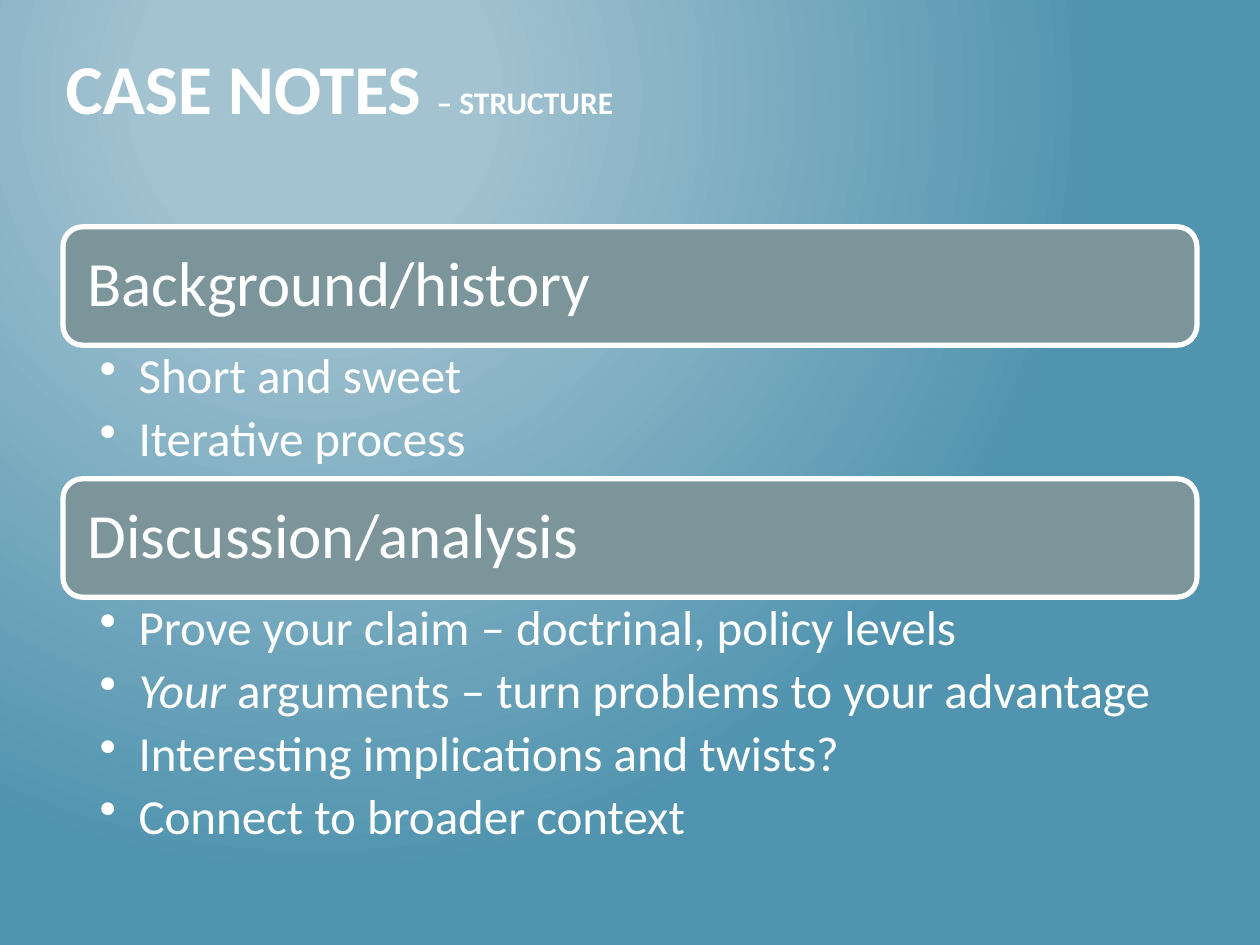
import pptx
import pptx.util
import pptx.dml.color
import pptx.enum.shapes
import pptx.enum.text
import pptx.oxml
import pptx.oxml.ns
from lxml import etree

Inches, Pt = pptx.util.Inches, pptx.util.Pt
qn = pptx.oxml.ns.qn
HEX = {"glow": "A3C3D1", "sea": "5194AF", "bar": "7C959A", "text": "FFFFFF"}
RGB = {name: pptx.dml.color.RGBColor.from_string(code) for name, code in HEX.items()}
LEFT, WIDTH, BAR = 0.5, 9, 0.94

# Each part: top of its bar, height of its list, heading, points of (words, italic) runs
PARTS = [
    (1.8, 1.06, "Background/history", [
        [("Short and sweet", False)],
        [("Iterative process", False)],
    ]),
    (3.8, 2.12, "Discussion/analysis", [
        [("Prove your claim – doctrinal, policy levels", False)],
        [("Your", True), (" arguments – turn problems to your advantage", False)],
        [("Interesting implications and twists?", False)],
        [("Connect to broader context", False)],
    ]),
]


def add_run(para, words, size, **form):
    run = para.add_run()
    run.text = words
    run.font.color.rgb = RGB["text"]
    for key, value in {"name": "Calibri", "size": Pt(size), **form}.items():
        setattr(run.font, key, value)


def set_frame(frame, anchor, pads):
    form = {"word_wrap": True, "vertical_anchor": anchor}
    sides = ("left", "top", "right", "bottom")
    form.update({f"margin_{side}": Inches(pad) for side, pad in zip(sides, pads)})
    for key, value in form.items():
        setattr(frame, key, value)


deck = pptx.Presentation()
deck.slide_width, deck.slide_height = Inches(10), Inches(7.5)
slide = deck.slides.add_slide(deck.slide_layouts[5])
ANCHOR = pptx.enum.text.MSO_ANCHOR
ALIGN = pptx.enum.text.PP_ALIGN

# Background: round glow in the upper left
fill = slide.background.fill
fill.gradient()
for stop, name, place in zip(fill.gradient_stops, ("glow", "sea"), (0.2, 1)):
    stop.color.rgb = RGB[name]
    stop.position = place
grad = slide.background._cSld.find(".//" + qn("a:gradFill"))
glow = etree.Element(qn("a:path"), path="circle")
etree.SubElement(glow, qn("a:fillToRect"), l="50000", t="20000", r="100000", b="100000")
grad.replace(grad.find(qn("a:lin")), glow)

# Title
title = slide.shapes.title
spot = {"left": 0.42, "top": 0.25, "width": 9, "height": 0.87}
for key, value in spot.items():
    setattr(title, key, Inches(value))
set_frame(title.text_frame, ANCHOR.MIDDLE, (0.1, 0.05, 0.1, 0.05))
para = title.text_frame.paragraphs[0]
para.alignment = ALIGN.LEFT
add_run(para, "CASE NOTES ", 40, bold=True)
add_run(para, "– STRUCTURE", 18, bold=True)

for top, tall, head, points in PARTS:
    # Heading bar
    bar = slide.shapes.add_shape(
        pptx.enum.shapes.MSO_SHAPE.ROUNDED_RECTANGLE,
        Inches(LEFT), Inches(top), Inches(WIDTH), Inches(BAR))
    bar.shadow.inherit = False
    bar.fill.solid()
    bar.fill.fore_color.rgb = RGB["bar"]
    bar.line.color.rgb = RGB["text"]
    bar.line.width = Pt(3)
    set_frame(bar.text_frame, ANCHOR.MIDDLE, (0.15,) * 4)
    para = bar.text_frame.paragraphs[0]
    para.alignment = ALIGN.LEFT
    para.line_spacing = 0.9
    add_run(para, head, 36)

    # Bullet list under the bar
    box = slide.shapes.add_textbox(
        Inches(LEFT), Inches(top + BAR), Inches(WIDTH), Inches(tall))
    set_frame(box.text_frame, ANCHOR.TOP, (0.29, 0.05, 0.28, 0.05))
    for num, runs in enumerate(points):
        para = box.text_frame.add_paragraph() if num else box.text_frame.paragraphs[0]
        form = {"level": 1, "line_spacing": 0.9, "space_after": Pt(5.6)}
        for key, value in form.items():
            setattr(para, key, value)
        props = para._p.get_or_add_pPr()
        props.set("marL", str(Inches(0.31)))
        props.set("indent", str(Inches(-0.31)))
        etree.SubElement(props, qn("a:buChar"), char="•")
        for words, slant in runs:
            add_run(para, words, 28, italic=slant)

deck.save("out.pptx")
